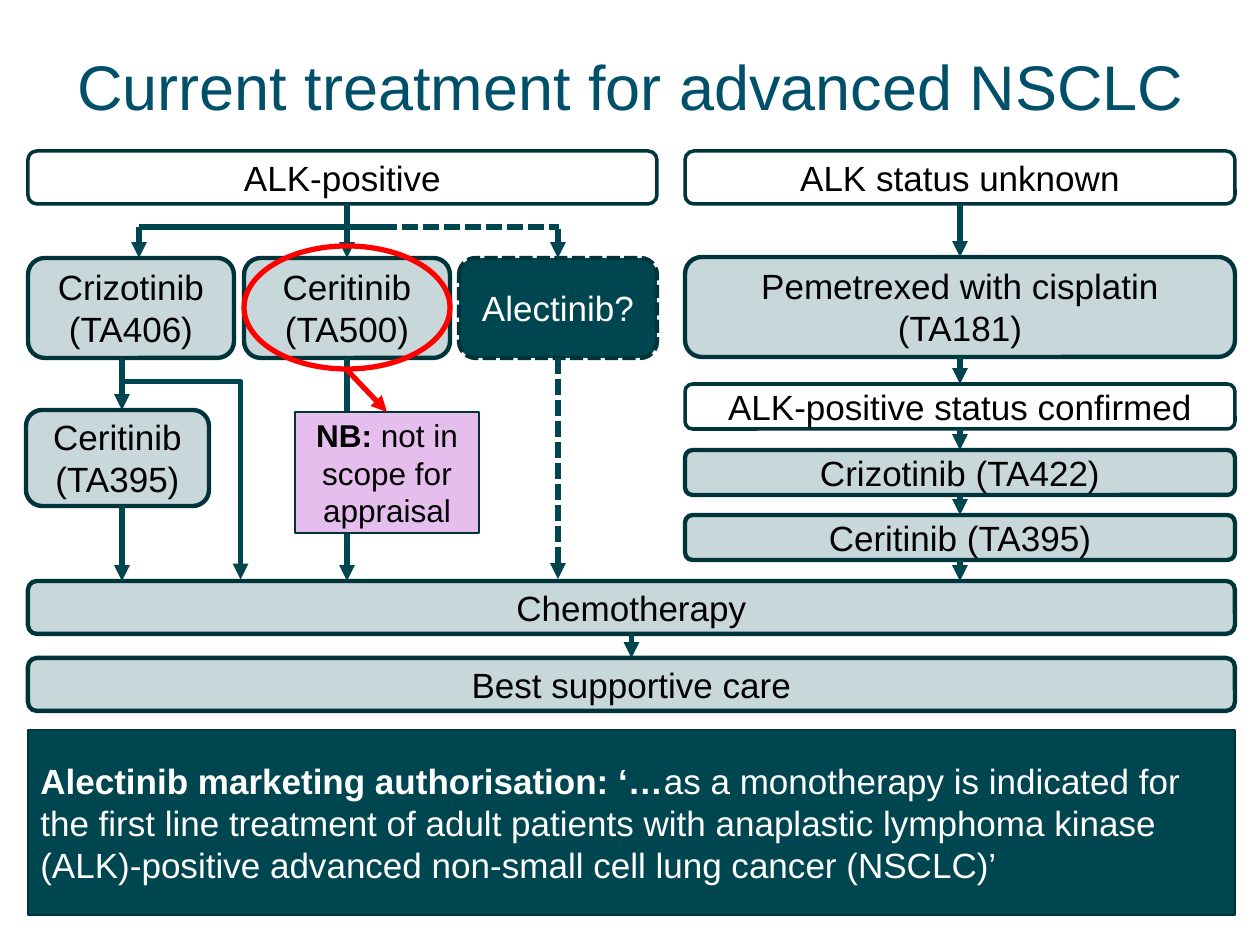
"""Build the slide on current treatment for advanced NSCLC."""
from lxml.etree import SubElement
from pptx import Presentation
from pptx.dml.color import RGBColor
from pptx.enum.dml import MSO_LINE
from pptx.enum.shapes import MSO_CONNECTOR, MSO_SHAPE
from pptx.enum.text import MSO_ANCHOR, PP_ALIGN
from pptx.oxml.ns import qn
from pptx.util import Pt

EMU_PER_PX = 914400 / 126
COLORS = {
    "title": "00506A", "border": "00343B", "teal": "004650", "pale": "C7D7DA",
    "lilac": "E5BEEE", "red": "FF0000", "black": "000000", "white": "FFFFFF",
}
TOP, LEFT, BOTTOM = 0, 1, 2


def px(length):
    return round(length * EMU_PER_PX)


def rgb(name):
    return RGBColor.from_string(COLORS[name])


def write(shape, parts, size=20, color="black", align=PP_ALIGN.CENTER):
    frame = shape.text_frame
    frame.word_wrap = True
    frame.vertical_anchor = MSO_ANCHOR.MIDDLE
    paragraph = frame.paragraphs[0]
    paragraph.alignment = align
    for text, bold in parts:
        run = paragraph.add_run()
        run.text = text
        run.font.name = "Arial"
        run.font.size = Pt(size)
        run.font.bold = bold
        run.font.color.rgb = rgb(color)
    return paragraph


def add_outline(slide, kind, bounds, fill=None, border="border", weight=2.5):
    shape = slide.shapes.add_shape(kind, *map(px, bounds))
    shape.shadow.inherit = False
    if fill:
        shape.fill.solid()
        shape.fill.fore_color.rgb = rgb(fill)
    else:
        shape.fill.background()
    shape.line.color.rgb = rgb(border)
    shape.line.width = Pt(weight)
    return shape


def add_step(slide, text, bounds, fill="pale", color="black"):
    step = add_outline(slide, MSO_SHAPE.ROUNDED_RECTANGLE, bounds, fill,
                       weight=2.5 if fill else 2)
    write(step, [(text, False)], color=color)
    return step


def add_note(slide, parts, bounds, fill, **text_format):
    note = add_outline(slide, MSO_SHAPE.RECTANGLE, bounds, fill, weight=1)
    write(note, parts, **text_format)
    return note


def add_link(slide, start, end, source=None, target=None, color="teal",
             dash=None, arrow=True, kind=MSO_CONNECTOR.STRAIGHT):
    link = slide.shapes.add_connector(kind, *map(px, start + end))
    if source:
        link.begin_connect(source, BOTTOM)
    if target:
        link.end_connect(target, TOP)
    link.line.color.rgb = rgb(color)
    link.line.width = Pt(3)
    if dash:
        link.line.dash_style = dash
    if arrow:
        SubElement(link.line._get_or_add_ln(), qn("a:tailEnd"), type="triangle")
    SubElement(link._element.spPr, qn("a:effectLst"))
    return link


def add_bypass(slide):
    bypass = add_link(slide, (77, 416), (286, 534), kind=MSO_CONNECTOR.ELBOW)
    properties = bypass._element.spPr
    frame = properties.find(qn("a:xfrm"))
    frame.set("rot", "16200000")
    frame.set("flipH", "1")
    adjustments = properties.find(qn("a:prstGeom")).get_or_add_avLst()
    SubElement(adjustments, qn("a:gd"), name="adj1", fmla="val 5200")


def add_title(slide):
    title = slide.shapes.add_textbox(*map(px, (35, 25, 1191, 130)))
    heading = write(title, [("Current treatment for advanced NSCLC", False)],
                    size=36, color="title")
    heading.line_spacing = 0.9


def add_positive_pathway(slide):
    add_step(slide, "ALK-positive", (28, 151, 629, 53), fill=None)
    add_step(slide, "Crizotinib (TA406)", (28, 258, 206, 100))
    ceritinib = add_step(slide, "Ceritinib (TA500)", (244, 258, 206, 100))
    alectinib = add_step(slide, "Alectinib?", (459, 258, 198, 100), "teal", "white")
    alectinib.line.dash_style = MSO_LINE.SQUARE_DOT
    add_step(slide, "Ceritinib (TA395)", (26, 410, 183, 96))

    add_link(slide, (347, 204), (347, 228), arrow=False)
    add_link(slide, (382, 227), (139, 227), arrow=False)
    add_link(slide, (381, 227), (559, 227), dash=MSO_LINE.SQUARE_DOT, arrow=False)
    add_link(slide, (139, 227), (139, 258), dash=MSO_LINE.DASH)
    add_link(slide, (347, 219), (347, 258), target=ceritinib)
    add_link(slide, (558, 229), (558, 258), target=alectinib, dash=MSO_LINE.DASH)
    add_link(slide, (122, 359), (122, 410))
    add_link(slide, (122, 506), (122, 581))
    add_bypass(slide)
    add_link(slide, (347, 358), (347, 581), source=ceritinib)
    add_link(slide, (558, 358), (558, 579), source=alectinib, dash=MSO_LINE.SQUARE_DOT)


def add_unknown_pathway(slide):
    steps = [
        ("ALK status unknown", 151, 53, None),
        ("Pemetrexed with cisplatin (TA181)", 257, 100, "pale"),
        ("ALK-positive status confirmed", 384, 45, None),
        ("Crizotinib (TA422)", 450, 45, "pale"),
        ("Ceritinib (TA395)", 515, 45, "pale"),
    ]
    boxes = [add_step(slide, text, (685, top, 550, height), fill)
             for text, top, height, fill in steps]
    for source, target in zip(boxes, boxes[1:]):
        add_link(slide, (0, 0), (0, 0), source, target)
    add_link(slide, (960, 560), (960, 581), source=boxes[-1])


def add_later_care(slide):
    chemotherapy, supportive = [
        add_step(slide, text, (28, top, 1207, 53))
        for text, top in (("Chemotherapy", 581), ("Best supportive care", 658))]
    add_link(slide, (0, 0), (0, 0), chemotherapy, supportive)


def add_notes(slide):
    add_note(slide, [
        ("Alectinib marketing authorisation: ‘…", True),
        ("as a monotherapy is indicated for the first line treatment of adult "
         "patients with anaplastic lymphoma kinase (ALK)-positive advanced "
         "non-small cell lung cancer (NSCLC)’", False),
    ], (28, 730, 1207, 185), "teal", color="white", align=PP_ALIGN.LEFT)
    scope = add_note(slide, [("NB: ", True), ("not in scope for appraisal", False)],
                     (295, 412, 184, 121), "lilac", size=18)
    add_outline(slide, MSO_SHAPE.OVAL, (244, 246, 206, 123), border="red", weight=3)
    add_link(slide, (347, 370), (387, 412), target=scope, color="red")


def main():
    presentation = Presentation()
    presentation.slide_width = px(1260)
    presentation.slide_height = px(945)
    slide = presentation.slides.add_slide(presentation.slide_layouts[6])
    add_title(slide)
    add_later_care(slide)
    add_positive_pathway(slide)
    add_unknown_pathway(slide)
    add_notes(slide)
    presentation.save("out.pptx")


if __name__ == "__main__":
    main()
